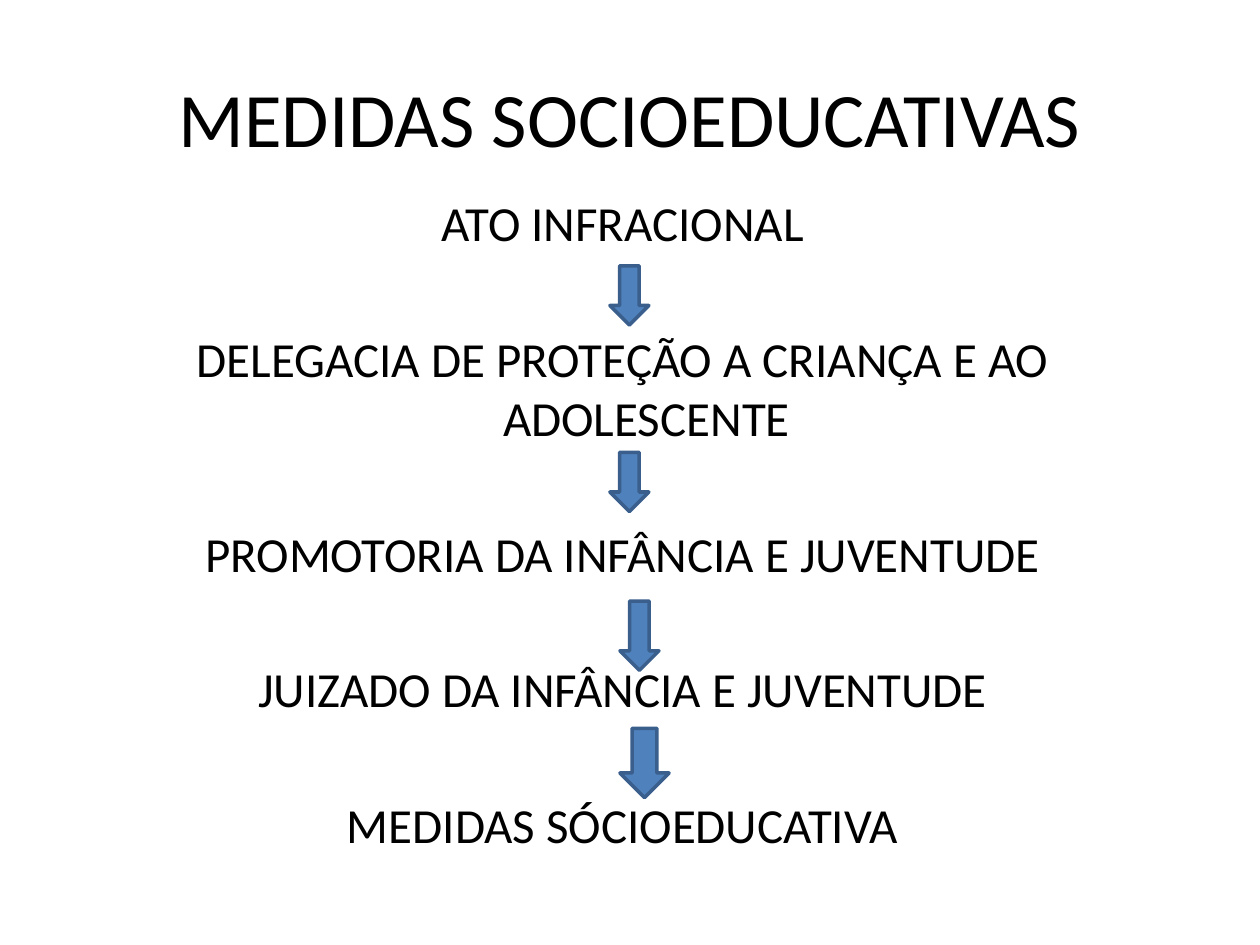
from pptx import Presentation
from pptx import util as u
from pptx.dml.color import RGBColor
from pptx.enum import shapes, text

TITLE = "MEDIDAS SOCIOEDUCATIVAS"
STEPS = [
    "ATO INFRACIONAL",
    "DELEGACIA DE PROTEÇÃO A CRIANÇA E AO ADOLESCENTE",
    "PROMOTORIA DA INFÂNCIA E JUVENTUDE",
    "JUIZADO DA INFÂNCIA E JUVENTUDE",
    "MEDIDAS SÓCIOEDUCATIVA",
]
# left, top, width, height
ARROWS = [
    (4.84, 2.11, 0.31, 0.47),
    (4.84, 3.59, 0.31, 0.47),
    (4.92, 4.77, 0.31, 0.55),
    (4.92, 5.78, 0.39, 0.55),
]
STEP_GAP = 44  # points between steps, leaving room for an arrow
HANGING = u.Inches(0.38)


def color(value):
    return RGBColor.from_string(value)


def add_text(page, place, lines, size, anchor):
    box = page.shapes.add_textbox(*map(u.Inches, place))
    frame = box.text_frame
    frame.word_wrap = True
    frame.vertical_anchor = anchor
    frame.text = "\n".join(lines)
    for para in frame.paragraphs:
        para.alignment = text.PP_ALIGN.CENTER
        font = para.runs[0].font
        font.name, font.size = "Calibri", u.Pt(size)
        font.color.rgb = color("000000")
    return frame


deck = Presentation()
deck.slide_width, deck.slide_height = u.Inches(10), u.Inches(7.5)
page = deck.slides.add_slide(deck.slide_layouts[6])

# Title and steps
add_text(page, (0.5, 0.3, 9, 1.25), [TITLE], 44, text.MSO_ANCHOR.MIDDLE)
steps = add_text(page, (0.5, 1.48, 8.88, 5.7), STEPS, 28, text.MSO_ANCHOR.TOP)
for number, para in enumerate(steps.paragraphs):
    para.space_before = u.Pt(STEP_GAP if number else 0)
    indents = para._p.get_or_add_pPr()
    indents.set("marL", str(HANGING))
    indents.set("indent", str(-HANGING))

# Arrows between the steps
for place in ARROWS:
    arrow = page.shapes.add_shape(shapes.MSO_SHAPE.DOWN_ARROW, *map(u.Inches, place))
    arrow.shadow.inherit = False
    arrow.fill.solid()
    arrow.fill.fore_color.rgb = color("4F81BD")
    arrow.line.color.rgb = color("3A5F8C")
    arrow.line.width = u.Pt(2)

deck.save("out.pptx")
